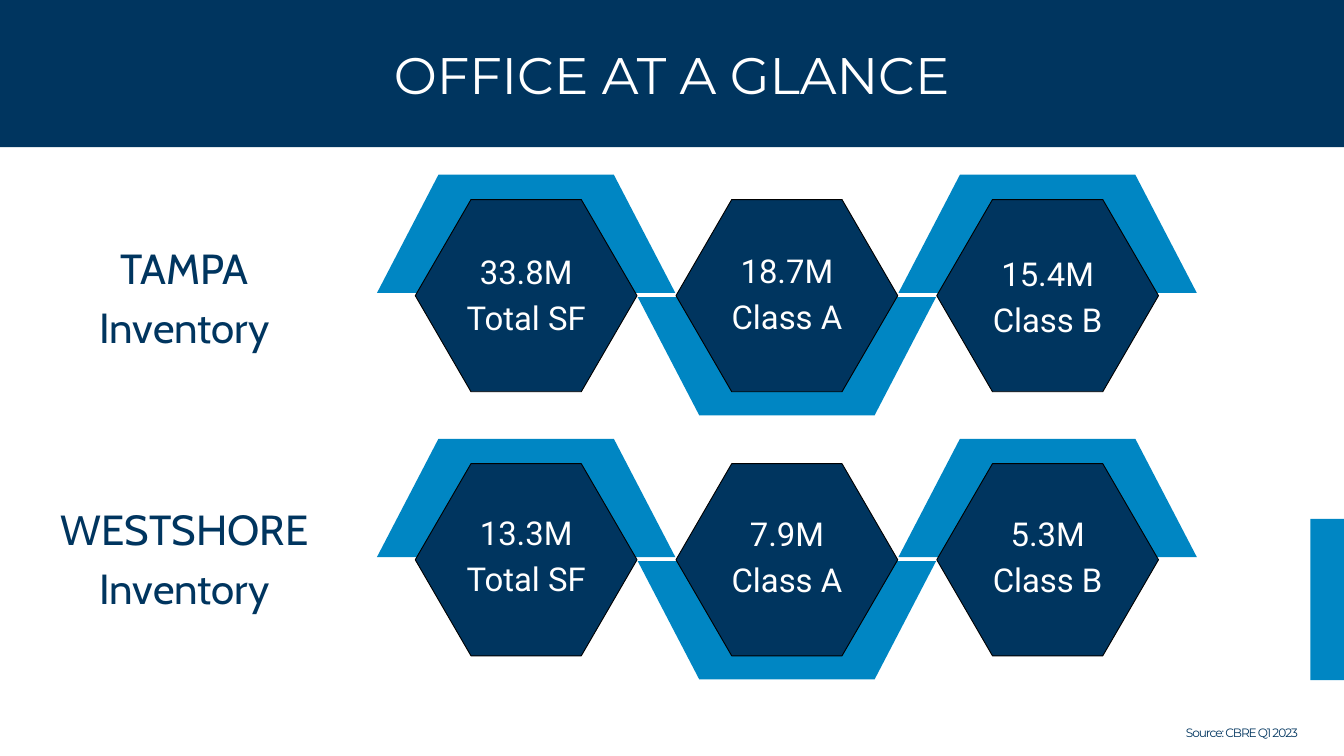
from pptx import Presentation
from pptx.dml.color import RGBColor
from pptx.enum.shapes import MSO_SHAPE as SHAPE
from pptx.enum.text import MSO_ANCHOR as ANCHOR, MSO_AUTO_SIZE as AUTO_SIZE, PP_ALIGN as ALIGN
from pptx.util import Pt

# Content: row label, then (figure, caption, text top) for each hexagon
TITLE = "OFFICE AT A GLANCE"
SOURCE = "Source: CBRE Q1 2023"
ROWS = [
    ("TAMPA", 348, [("33.8M", "Total SF", 365), ("18.7M", "Class A", 363), ("15.4M", "Class B", 367)]),
    ("WESTSHORE", 737, [("13.3M", "Total SF", 753), ("7.9M", "Class A", 755), ("5.3M", "Class B", 755)]),
]
LABEL_CAPTION = "Inventory"

# Layout, at 100 px to the inch
PX = 9144
NAVY, BLUE, WHITE, BLACK = "00355F", "0086C3", "FFFFFF", "000000"
HEX_LEFT, HEX_TOP, HEX_W, HEX_H = 618, 297, 330, 286
COLUMN_STEP, ROW_STEP = 388, 393
BAND_W, BAND_H = 444, 176
BAND_RISE, BAND_DROP = -37, 145  # band top relative to its hexagon
FIGURE_W, FIGURE_H = 192, 135


def px(*lengths):
    return [length * PX for length in lengths]


def color(hex_string):
    return RGBColor.from_string(hex_string)


def add_block(kind, box, fill, line=None):
    block = slide.shapes.add_shape(kind, *px(*box))
    block.shadow.inherit = False
    block.fill.solid()
    block.fill.fore_color.rgb = color(fill)
    if line:
        block.line.color.rgb = color(line)
        block.line.width = Pt(1)
    else:
        block.line.fill.background()
    return block


def write(holder, text, font, size, spacing, fill):
    frame = holder.text_frame
    frame.text = text
    frame.word_wrap = True
    frame.auto_size = AUTO_SIZE.NONE
    frame.vertical_anchor = ANCHOR.TOP
    frame.margin_left = frame.margin_top = frame.margin_right = frame.margin_bottom = 0
    for paragraph in frame.paragraphs:
        paragraph.alignment = ALIGN.CENTER
        paragraph.line_spacing = Pt(spacing)
        for run in paragraph.runs:
            run.font.name = font
            run.font.size = Pt(size)
            run.font.color.rgb = color(fill)
    return frame


def add_text(box, *style):
    return write(slide.shapes.add_textbox(*px(*box)), *style)


prs = Presentation()
prs.slide_width, prs.slide_height = px(2000, 1125)
slide = prs.slides.add_slide(prs.slide_layouts[5])

# Header bar, with the title brought in front of it
add_block(SHAPE.RECTANGLE, (0, 0, 2000, 219), NAVY)
title = slide.shapes.title
title.left, title.top, title.width, title.height = px(561, 49, 877, 102)
write(title, TITLE, "Montserrat", 55, 77, WHITE)
title.element.getparent().append(title.element)

for row, (label, label_top, figures) in enumerate(ROWS):
    top = HEX_TOP + row * ROW_STEP
    lefts = [HEX_LEFT + column * COLUMN_STEP for column in range(len(figures))]

    # Bands behind the hexagons, alternately above and below
    for column, left in enumerate(lefts):
        below = column % 2 == 1
        band_top = top + (BAND_DROP if below else BAND_RISE)
        band = add_block(SHAPE.TRAPEZOID,
                         (left - (BAND_W - HEX_W) // 2, band_top, BAND_W, BAND_H), BLUE)
        band.adjustments[0] = 0.52
        band.rotation = 180 if below else 0

    # Hexagons with their figures
    for left, (figure, caption, text_top) in zip(lefts, figures):
        hexagon = add_block(SHAPE.HEXAGON, (left, top, HEX_W, HEX_H), NAVY, BLACK)
        hexagon.adjustments[0] = 0.29
        add_text((left + (HEX_W - FIGURE_W) // 2, text_top, FIGURE_W, FIGURE_H),
                 f"{figure}\n{caption}", "Roboto", 35.2, 49.3, WHITE)

    # Row label
    add_text((73, label_top, 403, 169), f"{label}\n{LABEL_CAPTION}", "Cabin", 45, 63, NAVY)

# Side accent and source line
add_block(SHAPE.RECTANGLE, (1950, 772, 50, 240), BLUE)
source = add_text((1746, 1076, 204, 25), SOURCE, "Montserrat", 13, 18.2, NAVY)
source.paragraphs[0].runs[0].font._element.set("spc", "-110")

prs.save("out.pptx")
